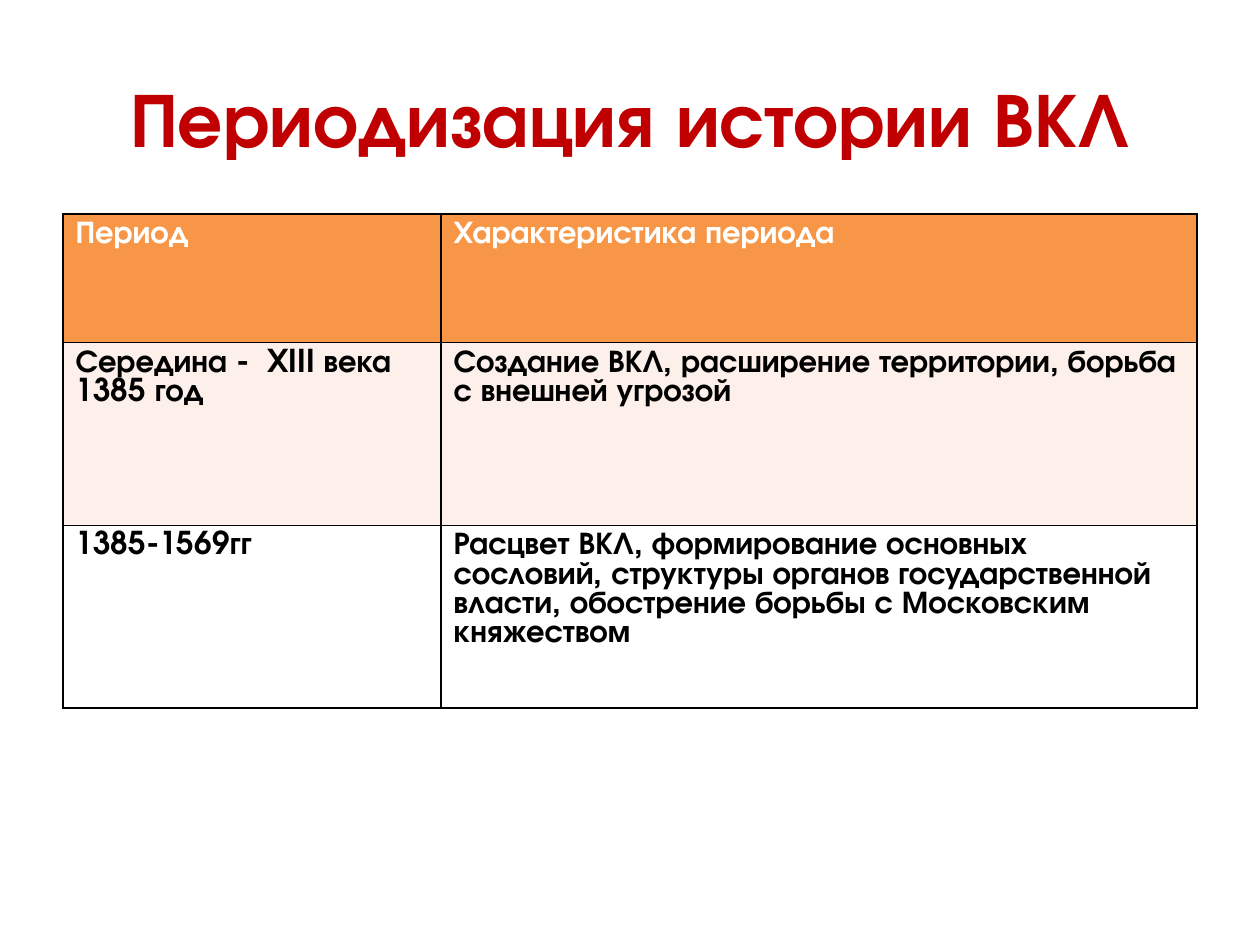
from dataclasses import dataclass

from lxml.etree import SubElement
from pptx import Presentation
from pptx.dml.color import RGBColor
from pptx.enum.text import MSO_ANCHOR as Anchor, PP_ALIGN as Align
from pptx.oxml.ns import qn
from pptx.slide import Slide
from pptx.util import Inches, Pt


def color(value):
    """Turn a hex string into a colour."""
    return RGBColor.from_string(value)


@dataclass
class Deck:
    """Style and current slide, on a grid of half-inch columns and rows."""

    slide: Slide
    unit: float = 0.5
    font: str = "TeX Gyre Adventor"
    border: str = "000000"

    def grid(self, *steps):
        """Convert grid steps to lengths."""
        return [Inches(step * self.unit) for step in steps]

    def add_lines(self, frame, lines, size, ink, align=Align.LEFT):
        """Fill a text frame with one paragraph per line."""
        for index, line in enumerate(lines):
            paragraph = frame.add_paragraph() if index else frame.paragraphs[0]
            paragraph.alignment = align
            run = paragraph.add_run()
            run.text = line
            run.font.name = self.font
            run.font.size = Pt(size)
            run.font.bold = True
            run.font.color.rgb = color(ink)

    def title(self, place, heading):
        """Add the centred heading."""
        frame = self.slide.shapes.add_textbox(*self.grid(*place)).text_frame
        frame.word_wrap = True
        frame.vertical_anchor = Anchor.MIDDLE
        self.add_lines(frame, [heading], 44, "C00000", Align.CENTER)

    def outline(self, cell):
        """Draw all four borders of a cell ahead of its fill."""
        properties = cell._tc.get_or_add_tcPr()
        for side in ("a:lnL", "a:lnR", "a:lnT", "a:lnB"):
            line = SubElement(properties, qn(side), w=str(Pt(1)))
            solid = SubElement(line, qn("a:solidFill"))
            SubElement(solid, qn("a:srgbClr"), val=self.border)

    def table(self, place, widths, heights, rows):
        """Add a table from rows of fill, ink and cell lines."""
        table = self.slide.shapes.add_table(
            len(heights), len(widths), *self.grid(*place, sum(widths), sum(heights))
        ).table
        for column, width in zip(table.columns, self.grid(*widths)):
            column.width = width
        for row, height, (fill, ink, texts) in zip(table.rows, self.grid(*heights), rows):
            row.height = height
            for cell, lines in zip(row.cells, texts):
                self.outline(cell)
                cell.fill.solid()
                cell.fill.fore_color.rgb = color(fill)
                self.add_lines(cell.text_frame, lines, 18, ink)


def main():
    """Build the slide on the periods of the Grand Duchy."""
    presentation = Presentation()
    presentation.slide_width, presentation.slide_height = Inches(10), Inches(7.5)
    deck = Deck(presentation.slides.add_slide(presentation.slide_layouts[6]))

    deck.title((1, 0.6, 18, 2.5), "Периодизация истории ВКЛ")
    periods = [
        ("F79646", "FFFFFF", [["Период"], ["Характеристика периода"]]),
        ("FDEFE9", "000000", [
            ["Середина -  XIII века", "1385 год"],
            ["Создание ВКЛ, расширение территории, борьба с внешней угрозой"],
        ]),
        ("FFFFFF", "000000", [
            ["1385-1569гг"],
            ["Расцвет ВКЛ, формирование основных сословий, структуры органов "
             "государственной власти, обострение борьбы с Московским княжеством"],
        ]),
    ]
    deck.table((1, 3.4), (6, 12), (2.04, 2.9, 2.9), periods)
    presentation.save("out.pptx")


if __name__ == "__main__":
    main()
